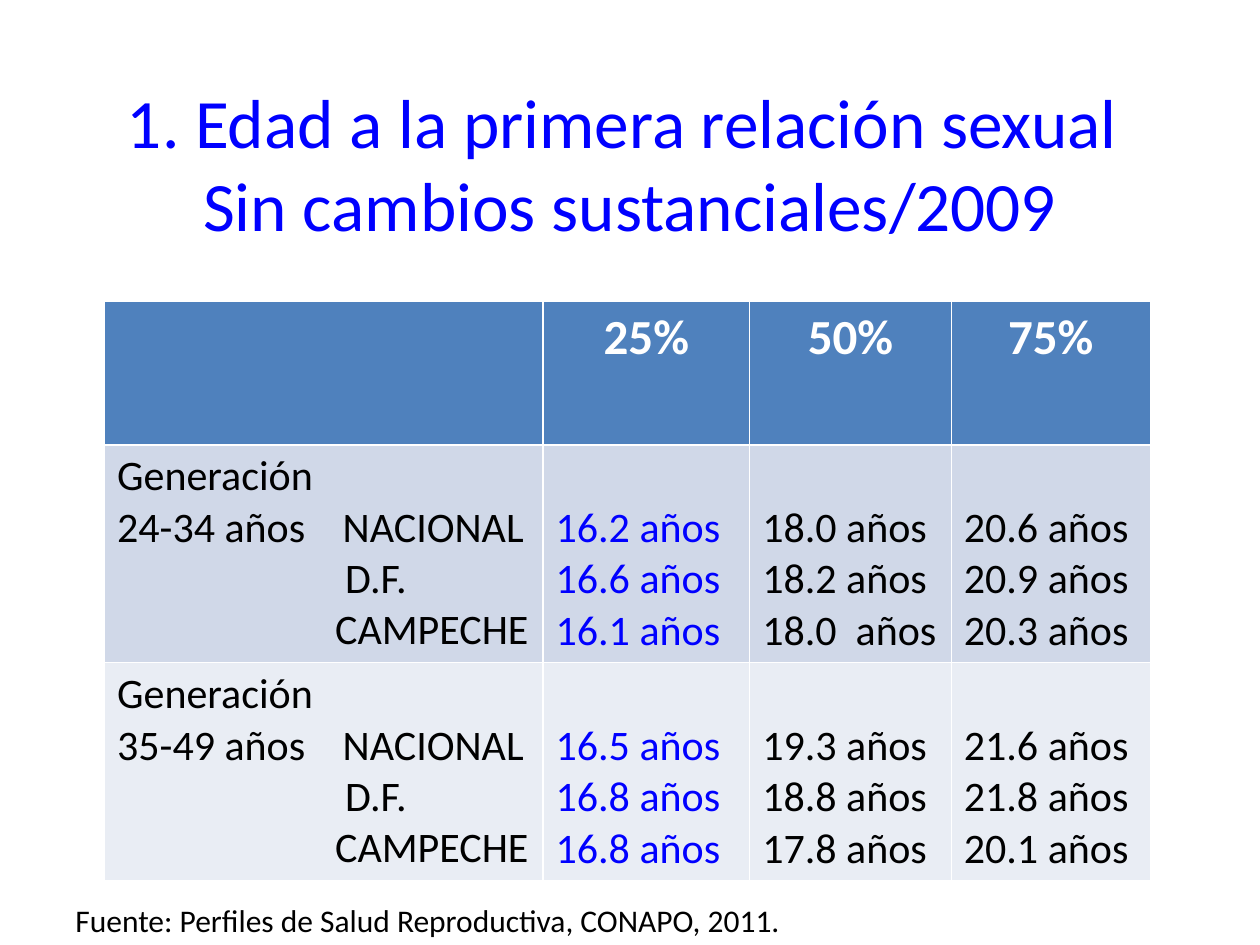
from pptx import Presentation
from pptx.dml.color import RGBColor
from pptx.enum.text import MSO_ANCHOR, PP_ALIGN
from pptx.oxml import parse_xml
from pptx.oxml.ns import nsdecls
from pptx.util import Inches, Pt

CENTER, LEFT = PP_ALIGN.CENTER, PP_ALIGN.LEFT
TOP, MIDDLE, BOTTOM = MSO_ANCHOR.TOP, MSO_ANCHOR.MIDDLE, MSO_ANCHOR.BOTTOM


class Theme:
    font = "Calibri"
    blue, black, white = "0000FF", "000000", "FFFFFF"
    header_fill = "4F81BD"
    row_fills = ["D0D8E8", "E9EDF4"]
    title, header, body, source = 39.6, 28, 24, 18


COLUMNS = [3.48, 1.64, 1.6, 1.58]
ROWS = [1.14, 1.73, 1.73]
HEADERS = ["", "25%", "50%", "75%"]
# Regions with their indent inside the label cell
REGIONS = [("NACIONAL", 1.79), ("D.F.", 1.81), ("CAMPECHE", 1.73)]
GENERATIONS = [
    ("24-34 años", [["16.2 años", "16.6 años", "16.1 años"],
                    ["18.0 años", "18.2 años", "18.0  años"],
                    ["20.6 años", "20.9 años", "20.3 años"]]),
    ("35-49 años", [["16.5 años", "16.8 años", "16.8 años"],
                    ["19.3 años", "18.8 años", "17.8 años"],
                    ["21.6 años", "21.8 años", "20.1 años"]]),
]


def write(tf, lines, size, color, align=LEFT, bold=False):
    """Fill a text frame with one paragraph per line."""
    fmt = {"name": Theme.font, "size": Pt(size), "bold": bold}
    for i, line in enumerate(lines):
        p = tf.paragraphs[0] if i == 0 else tf.add_paragraph()
        p.text = line
        p.alignment = align
        for r in p.runs:
            for key, value in fmt.items():
                setattr(r.font, key, value)
            r.font.color.rgb = RGBColor.from_string(color)


def add_text(s, box, lines, size, color, align=LEFT, anchor=TOP, wrap=True):
    sp = s.shapes.add_textbox(*map(Inches, box))
    tf = sp.text_frame
    tf.word_wrap = wrap
    tf.vertical_anchor = anchor
    write(tf, lines, size, color, align)


def fill_cell(cell, fill, lines, size, color, anchor=TOP, **fmt):
    cell.fill.solid()
    cell.fill.fore_color.rgb = RGBColor.from_string(fill)
    cell.vertical_anchor = anchor
    write(cell.text_frame, lines, size, color, **fmt)


def indent_regions(tf):
    """Set the first region on a tab stop and the others on a left indent."""
    first, *others = [Inches(indent) for _, indent in REGIONS]
    pPr = tf.paragraphs[1]._p.get_or_add_pPr()
    pPr.append(parse_xml(f'<a:tabLst {nsdecls("a")}>'
                         f'<a:tab pos="{first}" algn="l"/></a:tabLst>'))
    for p, indent in zip(tf.paragraphs[2:], others):
        p._p.get_or_add_pPr().set("marL", str(indent))


def add_age_table(s):
    box = (0.83, 2.39, sum(COLUMNS), sum(ROWS))
    table = s.shapes.add_table(len(ROWS), len(COLUMNS),
                               *map(Inches, box)).table
    for column, width in zip(table.columns, COLUMNS):
        column.width = Inches(width)
    for row, height in zip(table.rows, ROWS):
        row.height = Inches(height)

    # Header row
    for c, label in enumerate(HEADERS):
        fill_cell(table.cell(0, c), Theme.header_fill, [label], Theme.header,
                  Theme.white, align=CENTER, bold=True)

    # One row per generation
    names = [name for name, _ in REGIONS]
    for r, (ages, quartiles) in enumerate(GENERATIONS, start=1):
        fill = Theme.row_fills[r - 1]
        label = table.cell(r, 0)
        lines = ["Generación", f"{ages}\t{names[0]}", *names[1:]]
        fill_cell(label, fill, lines, Theme.body, Theme.black)
        indent_regions(label.text_frame)
        for c, values in enumerate(quartiles, start=1):
            color = Theme.blue if c == 1 else Theme.black
            fill_cell(table.cell(r, c), fill, values, Theme.body, color,
                      anchor=BOTTOM)


def main():
    prs = Presentation()
    prs.slide_width, prs.slide_height = Inches(10), Inches(7.5)
    s = prs.slides.add_slide(prs.slide_layouts[6])

    # Title
    add_text(s, (0.5, 0.66, 9, 1.25),
             ["1. Edad a la primera relación sexual \vSin cambios sustanciales/2009"],
             Theme.title, Theme.blue, CENTER, MIDDLE)
    # Ages by generation and region
    add_age_table(s)
    # Source
    add_text(s, (0.5, 7.1, 5.99, 0.4),
             ["Fuente: Perfiles de Salud Reproductiva, CONAPO, 2011."],
             Theme.source, Theme.black, wrap=False)

    prs.save("out.pptx")


if __name__ == "__main__":
    main()
